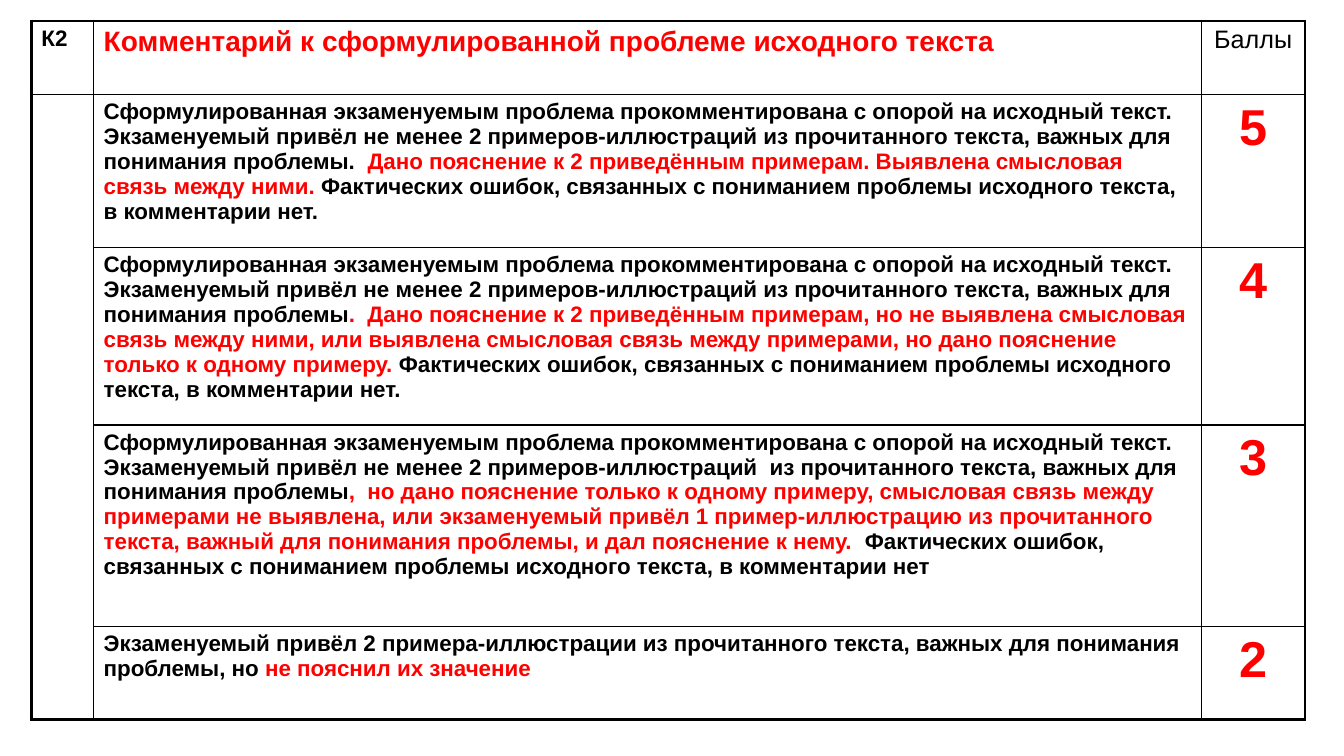
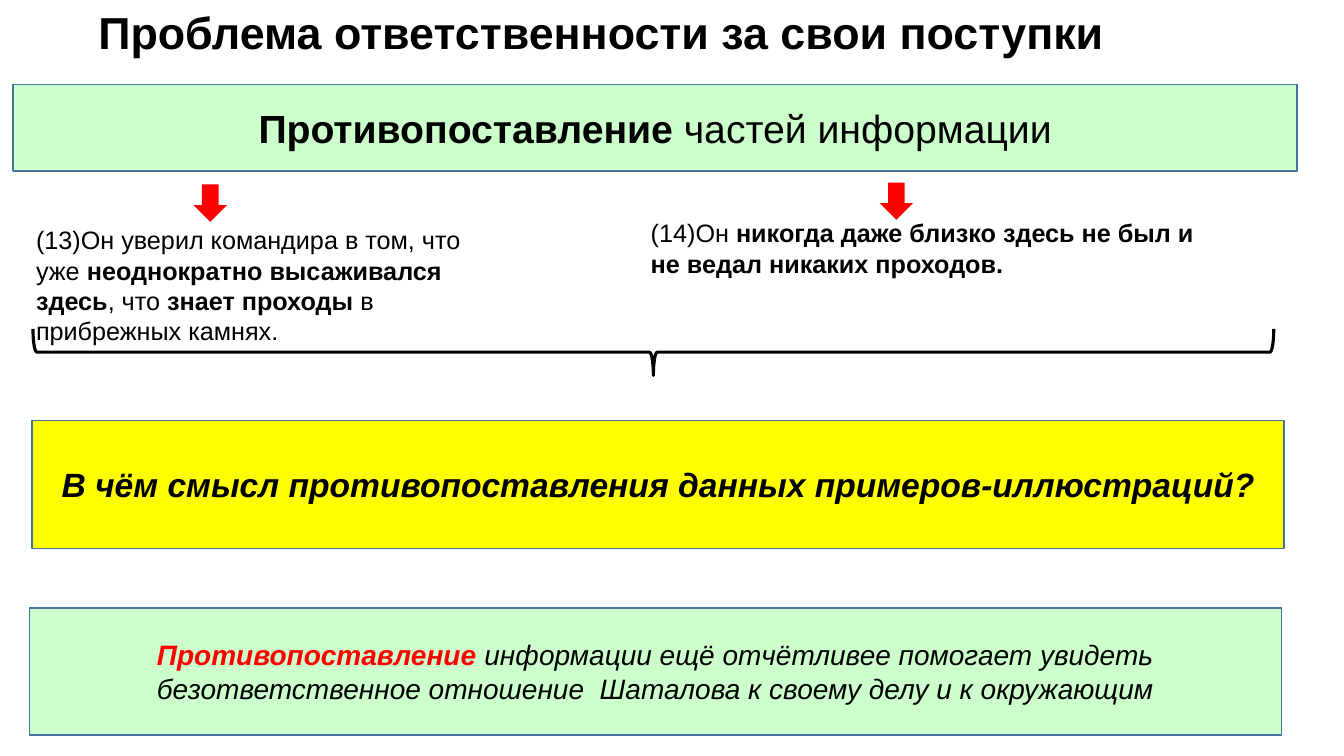
from dataclasses import dataclass
from typing import NamedTuple

from lxml.etree import SubElement
from pptx import Presentation
from pptx.dml.color import RGBColor
from pptx.enum.shapes import MSO_SHAPE
from pptx.enum.text import MSO_ANCHOR, PP_ALIGN
from pptx.oxml.ns import qn
from pptx.util import Cm, Pt

BLACK = RGBColor(0x00, 0x00, 0x00)
WHITE = RGBColor(0xFF, 0xFF, 0xFF)
RED = RGBColor(0xFF, 0x00, 0x00)
YELLOW = RGBColor(0xFF, 0xFF, 0x00)
MINT = RGBColor(0xCC, 0xFF, 0xCC)
STEEL = RGBColor(0x43, 0x73, 0x9E)

FONT = "Arial"
THIN, THICK = Pt(1), Pt(2.25)


class Run(NamedTuple):
    text: str
    bold: bool = False
    color: RGBColor = BLACK
    italic: bool = False


class Box(NamedTuple):
    left: float
    top: float
    width: float
    height: float

    def lengths(self):
        return [Cm(value) for value in self]


@dataclass
class Text:
    runs: list[Run]
    size: float
    align: PP_ALIGN = PP_ALIGN.LEFT


@dataclass
class Panel:
    box: Box
    fill: RGBColor
    text: Text


@dataclass
class Note:
    box: Box
    text: Text
    anchor: MSO_ANCHOR = MSO_ANCHOR.TOP


OPENING = ("Сформулированная экзаменуемым проблема прокомментирована с опорой на исходный текст. "
           "Экзаменуемый привёл не менее 2 примеров-иллюстраций")
READ_TEXT = " из прочитанного текста, важных для понимания проблемы"
CLOSING = ("Фактических ошибок, связанных с пониманием проблемы исходного текста, "
           "в комментарии нет")

CRITERIA = [
    [Run(OPENING + READ_TEXT + ".  ", True),
     Run("Дано пояснение к 2 приведённым примерам. Выявлена смысловая связь между ними. ",
         True, RED),
     Run(CLOSING + ".", True)],
    [Run(OPENING + READ_TEXT, True),
     Run(".  Дано пояснение к 2 приведённым примерам, но не выявлена смысловая связь "
         "между ними, или выявлена смысловая связь между примерами, но дано пояснение "
         "только к одному примеру. ", True, RED),
     Run(CLOSING + ".", True)],
    [Run(OPENING + " " + READ_TEXT, True),
     Run(",  но дано пояснение только к одному примеру, смысловая связь между примерами "
         "не выявлена, или экзаменуемый привёл 1 пример-иллюстрацию из прочитанного "
         "текста, важный для понимания проблемы, и дал пояснение к нему.  ", True, RED),
     Run(CLOSING, True)],
    [Run("Экзаменуемый привёл 2 примера-иллюстрации" + READ_TEXT + ", но ", True),
     Run("не пояснил их значение", True, RED)],
]
TOP_SCORE = 5
TABLE_BOX = Box(0.79, 0.53, 32.1, 17.6)
COLUMN_WIDTHS = [1.57, 27.91, 2.62]
ROW_HEIGHTS = [1.85, 3.86, 4.47, 5.08, 2.34]

PANELS = [
    Panel(Box(0.33, 2.13, 32.36, 2.18), MINT, Text(
        [Run("Противопоставление", True), Run(" частей информации")],
        28, PP_ALIGN.CENTER)),
    Panel(Box(0.81, 10.59, 31.55, 3.23), YELLOW, Text(
        [Run("В чём смысл противопоставления данных примеров-иллюстраций?",
             True, italic=True)], 24, PP_ALIGN.CENTER)),
    Panel(Box(0.74, 15.32, 31.55, 3.2), MINT, Text(
        [Run("Противопоставление ", True, RED, True),
         Run("информации ещё отчётливее помогает увидеть безответственное отношение  "
             "Шаталова к своему делу и к окружающим", italic=True)],
        20, PP_ALIGN.CENTER)),
]
NOTES = [
    Note(Box(2.23, 0, 30.15, 1.57),
         Text([Run("Проблема ответственности за свои поступки", True)], 32),
         MSO_ANCHOR.MIDDLE),
    Note(Box(0.66, 5.54, 12.27, 3.33), Text(
        [Run("(13)Он уверил командира в том, что уже "),
         Run("неоднократно высаживался здесь", True), Run(", что "),
         Run("знает проходы ", True), Run("в прибрежных камнях.")], 18)),
    Note(Box(16.15, 5.36, 14.78, 1.8), Text(
        [Run("(14)Он "),
         Run("никогда даже близко здесь не был и не ведал никаких проходов.", True)], 18)),
]
ARROWS = [Box(4.88, 4.65, 0.84, 0.94), Box(22.17, 4.6, 0.84, 0.94)]
BRACE = Box(15.88, -6.76, 1.17, 31.27)


def write_text(frame, text: Text) -> None:
    frame.word_wrap = True
    paragraph = frame.paragraphs[0]
    paragraph.alignment = text.align
    for part in text.runs:
        run = paragraph.add_run()
        run.text = part.text
        formats = {"name": FONT, "size": Pt(text.size),
                   "bold": part.bold, "italic": part.italic}
        for name, value in formats.items():
            setattr(run.font, name, value)
        run.font.color.rgb = part.color


def add_note(slide, note: Note) -> None:
    frame = slide.shapes.add_textbox(*note.box.lengths()).text_frame
    frame.vertical_anchor = note.anchor
    write_text(frame, note.text)


def add_plain_shape(slide, kind: MSO_SHAPE, box: Box, fill: RGBColor | None = None,
                    line: RGBColor | None = None, line_width: int = THIN):
    shape = slide.shapes.add_shape(kind, *box.lengths())
    shape.shadow.inherit = False
    if fill is None:
        shape.fill.background()
    else:
        shape.fill.solid()
        shape.fill.fore_color.rgb = fill
    if line is None:
        shape.line.fill.background()
    else:
        shape.line.color.rgb = line
        shape.line.width = line_width
    return shape


def add_panel(slide, panel: Panel) -> None:
    shape = add_plain_shape(slide, MSO_SHAPE.RECTANGLE, panel.box, panel.fill, STEEL)
    shape.text_frame.vertical_anchor = MSO_ANCHOR.MIDDLE
    write_text(shape.text_frame, panel.text)


def set_borders(cell, widths: dict[str, int]) -> None:
    properties = cell._tc.get_or_add_tcPr()
    for side, width in widths.items():
        line = SubElement(properties, qn(f"a:ln{side}"), w=str(width))
        fill = SubElement(line, qn("a:solidFill"))
        SubElement(fill, qn("a:srgbClr"), val=str(BLACK))


def style_cells(table) -> None:
    last_row, last_column = len(ROW_HEIGHTS) - 1, len(COLUMN_WIDTHS) - 1
    for row in range(last_row + 1):
        for column in range(last_column + 1):
            cell = table.cell(row, column)
            at_bottom = row == last_row or cell.is_merge_origin
            widths = {
                "L": THICK if column == 0 else THIN,
                "R": THICK if column == last_column else THIN,
                "T": THICK if row == 0 else THIN,
                "B": THICK if at_bottom else THIN,
            }
            if cell.is_spanned:
                del widths["T"]
                if not at_bottom:
                    del widths["B"]
            set_borders(cell, widths)
            cell.fill.solid()
            cell.fill.fore_color.rgb = WHITE


def build_criteria_slide(slide) -> None:
    table = slide.shapes.add_table(
        len(ROW_HEIGHTS), len(COLUMN_WIDTHS), *TABLE_BOX.lengths()).table
    table.first_row = False
    table.horz_banding = False
    for column, width in zip(table.columns, COLUMN_WIDTHS):
        column.width = Cm(width)
    for row, height in zip(table.rows, ROW_HEIGHTS):
        row.height = Cm(height)
    table.cell(1, 0).merge(table.cell(len(CRITERIA), 0))
    style_cells(table)

    header = [
        Text([Run("К2", True)], 16),
        Text([Run("Комментарий к сформулированной проблеме исходного текста", True, RED)], 20),
        Text([Run("Баллы")], 18, PP_ALIGN.CENTER),
    ]
    for column, text in enumerate(header):
        write_text(table.cell(0, column).text_frame, text)
    for index, runs in enumerate(CRITERIA):
        score = Run(str(TOP_SCORE - index), True, RED)
        write_text(table.cell(index + 1, 1).text_frame, Text(runs, 16))
        write_text(table.cell(index + 1, 2).text_frame, Text([score], 36, PP_ALIGN.CENTER))


def build_contrast_slide(slide) -> None:
    for panel in PANELS:
        add_panel(slide, panel)
    for arrow in ARROWS:
        add_plain_shape(slide, MSO_SHAPE.DOWN_ARROW, arrow, RED)
    for note in NOTES:
        add_note(slide, note)
    brace = add_plain_shape(slide, MSO_SHAPE.RIGHT_BRACE, BRACE,
                            line=BLACK, line_width=THICK)
    brace.rotation = 90


def main() -> None:
    presentation = Presentation()
    presentation.slide_width = Cm(33.87)
    presentation.slide_height = Cm(19.05)
    blank = presentation.slide_layouts[6]
    for build in (build_criteria_slide, build_contrast_slide):
        build(presentation.slides.add_slide(blank))
    presentation.save("out.pptx")


if __name__ == "__main__":
    main()
